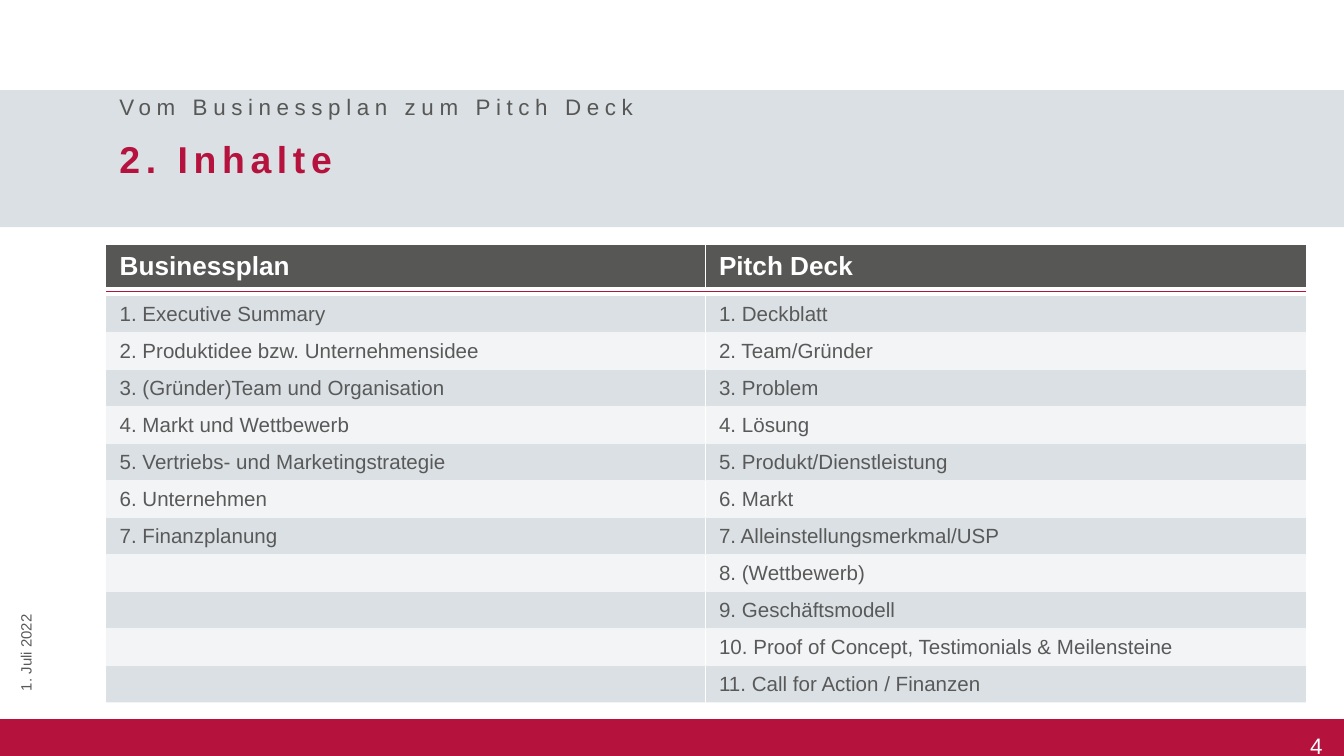
from dataclasses import dataclass
from itertools import zip_longest

from lxml.etree import SubElement
from pptx import Presentation
from pptx.dml.color import RGBColor
from pptx.enum.shapes import MSO_SHAPE as Shape
from pptx.enum.text import MSO_ANCHOR as Anchor, PP_ALIGN as Align
from pptx.oxml.ns import qn
from pptx.util import Inches, Pt


@dataclass(frozen=True)
class Theme:
    font: str = "Arial"
    red: str = "B5123E"
    gray: str = "575756"
    text: str = "595959"
    band: str = "DAE0E3"
    pale: str = "F2F4F6"
    white: str = "FFFFFF"
    title_size: int = 20
    header_size: int = 14
    subtitle_size: int = 12
    body_size: int = 11
    date_size: int = 8
    rule_size: int = 1
    tracking: int = 300


THEME = Theme()
NO_GRID_STYLE = "{2D5ABB26-0587-4C30-8999-92F81FD0307C}"

BUSINESS_PLAN = [
    "1. Executive Summary",
    "2. Produktidee bzw. Unternehmensidee",
    "3. (Gründer)Team und Organisation",
    "4. Markt und Wettbewerb",
    "5. Vertriebs- und Marketingstrategie",
    "6. Unternehmen",
    "7. Finanzplanung",
]
PITCH_DECK = [
    "1. Deckblatt",
    "2. Team/Gründer",
    "3. Problem",
    "4. Lösung",
    "5. Produkt/Dienstleistung",
    "6. Markt",
    "7. Alleinstellungsmerkmal/USP",
    "8. (Wettbewerb)",
    "9. Geschäftsmodell",
    "10. Proof of Concept, Testimonials & Meilensteine",
    "11. Call for Action / Finanzen",
]


def rgb(color):
    return RGBColor.from_string(color)


def style(paragraph, size, color, bold=False):
    font = paragraph.font
    font.name, font.size, font.bold = THEME.font, Pt(size), bold
    font.color.rgb = rgb(color)


def add_band(slide, top, height, color):
    band = slide.shapes.add_shape(
        Shape.RECTANGLE, 0, Inches(top), Inches(10), Inches(height))
    band.shadow.inherit = False
    band.fill.solid()
    band.fill.fore_color.rgb = rgb(color)
    band.line.fill.background()


def add_label(slide, text, box, size, color, bold=False, tracking=0):
    label = slide.shapes.add_textbox(*map(Inches, box))
    frame = label.text_frame
    frame.word_wrap = True
    frame.vertical_anchor = Anchor.MIDDLE
    paragraph = frame.paragraphs[0]
    run = paragraph.add_run()
    run.text = text
    style(paragraph, size, color, bold)
    if tracking:
        run.font._element.set("spc", str(tracking))
    return label


def add_page_number(slide, number):
    label = add_label(slide, number, (8.58, 5.26, 1.26, 0.39),
                      THEME.subtitle_size, THEME.white)
    frame = label.text_frame
    frame.margin_left = frame.margin_right = 0
    frame.margin_top = frame.margin_bottom = 0
    frame.paragraphs[0].alignment = Align.RIGHT
    frame.paragraphs[0].line_spacing = Pt(28)


def set_borders(cell, **colors):
    properties = cell._tc.get_or_add_tcPr()
    for side in "LRTB":
        if side in colors:
            line = SubElement(properties, qn(f"a:ln{side}"), w=str(int(Pt(1))),
                              cap="flat", cmpd="sng", algn="ctr")
            fill = SubElement(line, qn("a:solidFill"))
            SubElement(fill, qn("a:srgbClr"), val=colors[side])
            SubElement(line, qn("a:prstDash"), val="solid")


def fill_cell(cell, text, size, color, fill, bold=False, padding=0.04):
    cell.vertical_anchor = Anchor.MIDDLE
    cell.margin_top = cell.margin_bottom = Inches(padding)
    paragraph = cell.text_frame.paragraphs[0]
    if text:
        paragraph.text = text
        style(paragraph, size, color, bold)
    else:
        SubElement(paragraph._p, qn("a:endParaRPr"), sz=str(size * 100))
    cell.fill.solid()
    cell.fill.fore_color.rgb = rgb(fill)


def add_comparison(slide, headings, items):
    header_height, rule_height, item_height = 0.32, 0.03, 3.03 / 11
    heights = [header_height] + [rule_height] * 2 + [item_height] * len(items)
    table = slide.shapes.add_table(
        len(heights), 2, Inches(0.79), Inches(1.82),
        Inches(8.93), Inches(sum(heights))).table
    table.first_row = table.horz_banding = False
    table._tbl.tblPr.find(qn("a:tableStyleId")).text = NO_GRID_STYLE
    for column, width in zip(table.columns, (4.46, 4.47)):
        column.width = Inches(width)
    for row, height in zip(table.rows, heights):
        row.height = Inches(height)

    for column, heading in enumerate(headings):
        divider = {"LR"[1 - column]: THEME.white}
        header = table.cell(0, column)
        set_borders(header, B=THEME.white, **divider)
        fill_cell(header, heading, THEME.header_size, THEME.white, THEME.gray, True)
        for row, top, bottom in ((1, THEME.white, THEME.red),
                                 (2, THEME.red, THEME.white)):
            rule = table.cell(row, column)
            set_borders(rule, T=top, B=bottom)
            fill_cell(rule, "", THEME.rule_size, THEME.text, THEME.white, padding=0)
        for index, pair in enumerate(items):
            item = table.cell(index + 3, column)
            top = THEME.pale if index else THEME.white
            set_borders(item, T=top, B=THEME.pale, **divider)
            fill_cell(item, pair[column], THEME.body_size, THEME.text,
                      THEME.pale if index % 2 else THEME.band)


def main():
    deck = Presentation()
    deck.slide_width, deck.slide_height = Inches(10), Inches(10 * 9 / 16)
    slide = deck.slides.add_slide(deck.slide_layouts[6])

    add_band(slide, 5.35, 0.28, THEME.red)
    add_page_number(slide, "4")
    add_band(slide, 0.67, 1.02, THEME.band)
    add_label(slide, "2. Inhalte", (0.79, 0.96, 9.21, 0.44),
              THEME.title_size, THEME.red, True, THEME.tracking)
    add_label(slide, "Vom Businessplan zum Pitch Deck", (0.79, 0.67, 9.21, 0.24),
              THEME.subtitle_size, THEME.gray, tracking=THEME.tracking)
    add_comparison(slide, ("Businessplan", "Pitch Deck"),
                   list(zip_longest(BUSINESS_PLAN, PITCH_DECK, fillvalue="")))
    date = add_label(slide, "1. Juli 2022", (-0.42, 4.51, 1.22, 0.24),
                     THEME.date_size, THEME.text)
    date.rotation = 270

    deck.save("out.pptx")


if __name__ == "__main__":
    main()
